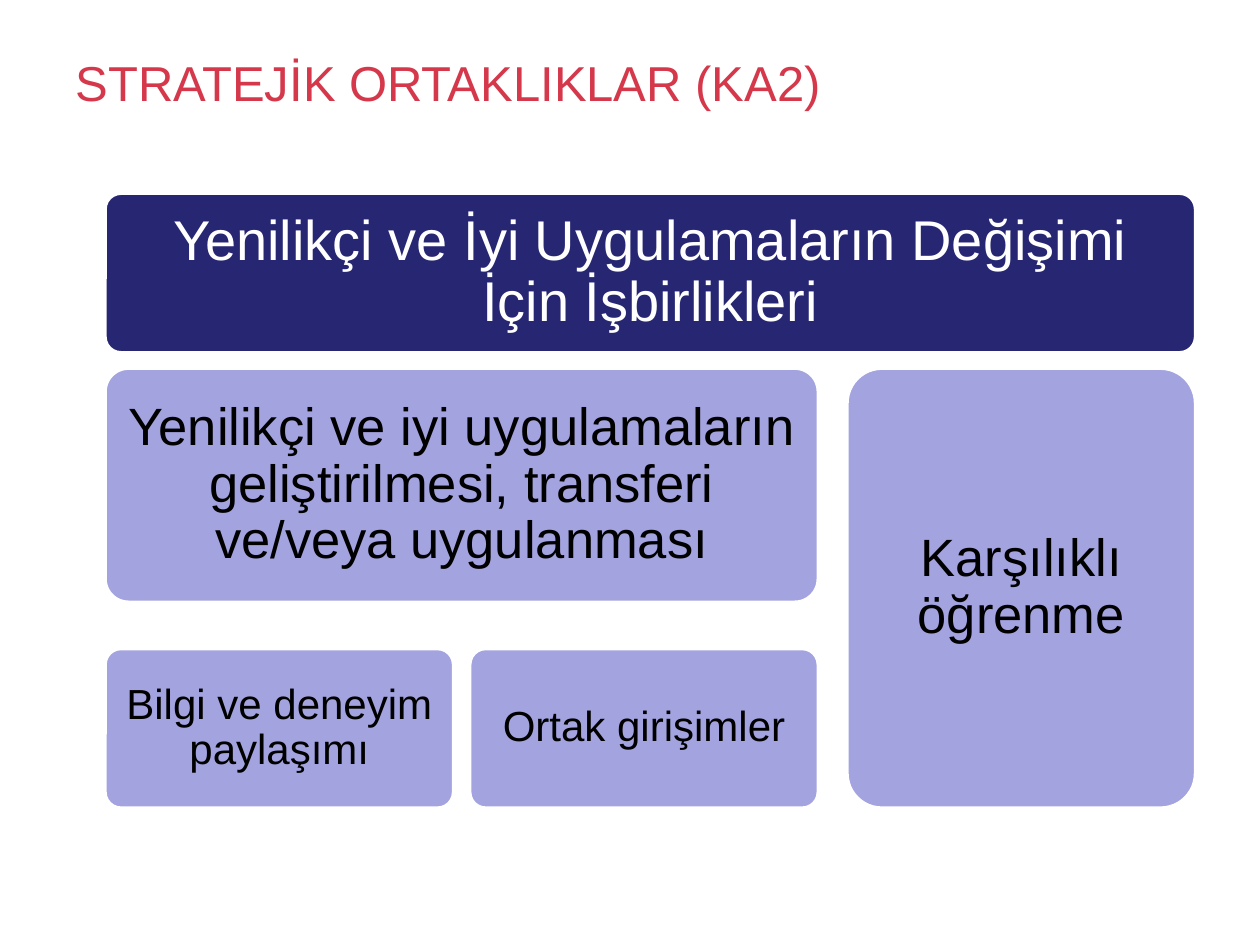
from pptx import Presentation
from pptx.dml.color import RGBColor
from pptx.enum.shapes import MSO_SHAPE
from pptx.enum.text import MSO_ANCHOR, PP_ALIGN
from pptx.util import Pt

ROUNDED = MSO_SHAPE.ROUNDED_RECTANGLE
MIDDLE = MSO_ANCHOR.MIDDLE
LEFT, CENTER = PP_ALIGN.LEFT, PP_ALIGN.CENTER

THEME = {
    "font": "Arial",
    "title": RGBColor(0xD5, 0x38, 0x4B),
    "navy": RGBColor(0x26, 0x26, 0x73),
    "lavender": RGBColor(0xA3, 0xA3, 0xE0),
    "white": RGBColor(0xFF, 0xFF, 0xFF),
    "black": RGBColor(0, 0, 0),
    "title_size": 28,
    "heading_size": 32,
    "topic_size": 30,
    "detail_size": 24,
}


def style_text(frame, text, size, color, align, margin):
    frame.text = text
    frame.word_wrap = True
    frame.vertical_anchor = MIDDLE
    for side in ("left", "top", "right", "bottom"):
        setattr(frame, f"margin_{side}", Pt(margin))
    paragraph = frame.paragraphs[0]
    paragraph.alignment = align
    font_format = {"name": THEME["font"], "size": Pt(size), "bold": False}
    for attribute, value in font_format.items():
        setattr(paragraph.font, attribute, value)
    paragraph.font.color.rgb = color
    return paragraph


prs = Presentation()
prs.slide_width, prs.slide_height = Pt(720), Pt(540)
slide = prs.slides.add_slide(prs.slide_layouts[5])

title = slide.shapes.title
title_place = {"left": 36, "top": 21.6, "width": 648, "height": 50.4}
for attribute, value in title_place.items():
    setattr(title, attribute, Pt(value))
style_text(title.text_frame, "STRATEJİK ORTAKLIKLAR (KA2)",
           THEME["title_size"], THEME["title"], LEFT, 7.2)
title.text_frame.margin_top = title.text_frame.margin_bottom = Pt(3.6)

# Three equal columns: a narrow gap inside the pair, a wide one before the last
left, column, narrow_gap, wide_gap = 60, 199.2, 9.2, 16.4
second = left + column + narrow_gap
pair_width = 2 * column + narrow_gap
third = left + pair_width + wide_gap
full_width = third + column - left

heading_top, topic_top, detail_top = 110.4, 210.4, 370.6
row_height, topic_height = 91.2, 133.8
tall_height = detail_top + row_height - topic_top

# text, left, top, width, height, fill, text colour, size, margin
navy, lavender = THEME["navy"], THEME["lavender"]
white, black = THEME["white"], THEME["black"]
boxes = [
    ("Yenilikçi ve İyi Uygulamaların Değişimi İçin İşbirlikleri",
     left, heading_top, full_width, row_height,
     navy, white, THEME["heading_size"], 9.6),
    ("Yenilikçi ve iyi uygulamaların geliştirilmesi, transferi ve/veya uygulanması",
     left, topic_top, pair_width, topic_height,
     lavender, black, THEME["topic_size"], 8.6),
    ("Bilgi ve deneyim paylaşımı", left, detail_top, column, row_height,
     lavender, black, THEME["detail_size"], 7.2),
    ("Ortak girişimler", second, detail_top, column, row_height,
     lavender, black, THEME["detail_size"], 7.2),
    ("Karşılıklı öğrenme", third, topic_top, column, tall_height,
     lavender, black, THEME["topic_size"], 8.6),
]
for text, x, y, width, height, fill, color, size, margin in boxes:
    box = slide.shapes.add_shape(ROUNDED, Pt(x), Pt(y), Pt(width), Pt(height))
    box.adjustments[0] = 0.1
    box.shadow.inherit = False
    box.fill.solid()
    box.fill.fore_color.rgb = fill
    box.line.color.rgb = white
    box.line.width = Pt(2)
    label = style_text(box.text_frame, text, size, color, CENTER, margin)
    label.line_spacing = 0.9

prs.save("out.pptx")
